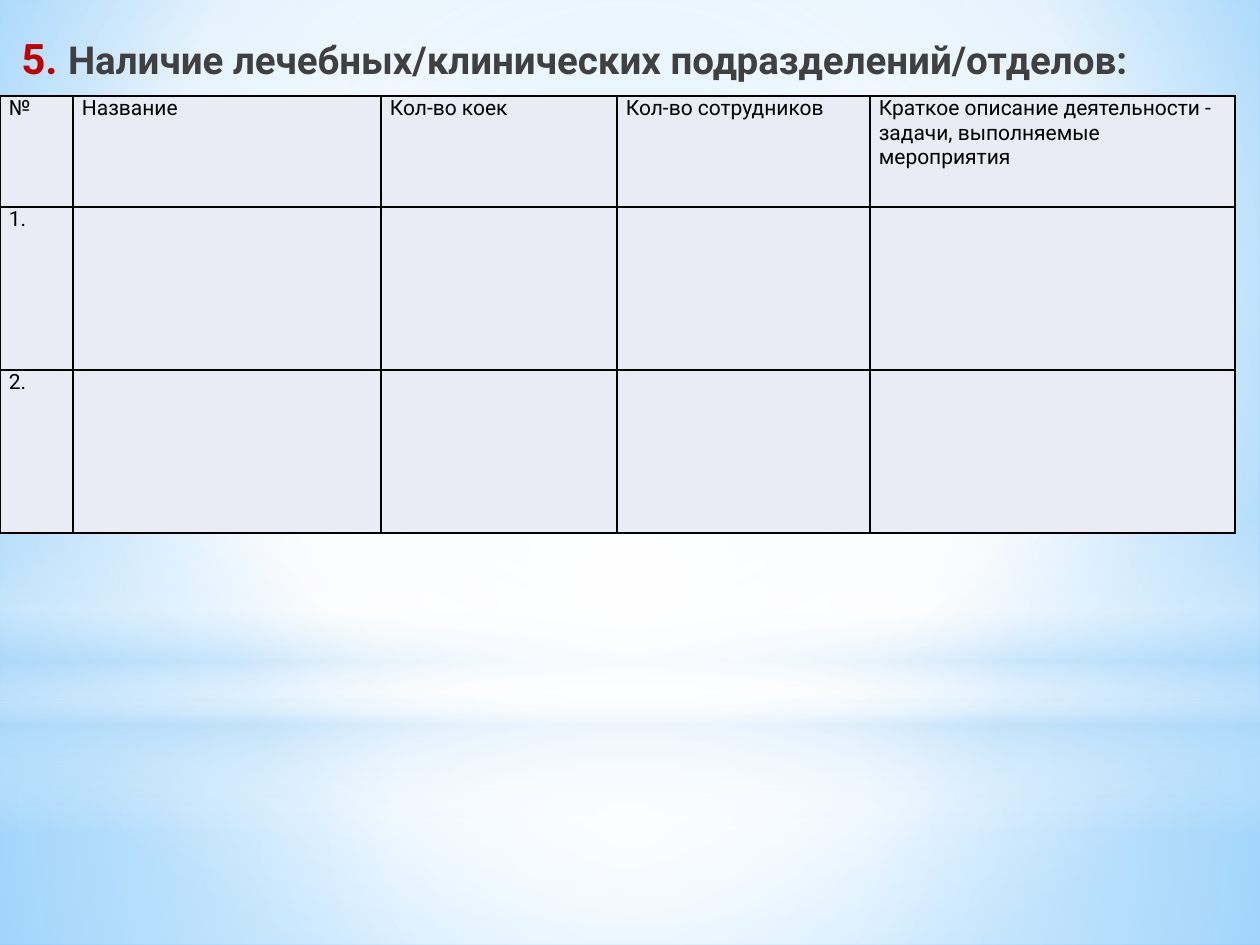
from lxml import etree
from pptx import Presentation
from pptx.dml.color import RGBColor
from pptx.enum import shapes, text
from pptx.oxml.ns import qn
from pptx.util import Emu, Pt

SCALE = 914400 / 126
FONT = "Roboto"
WHITE = RGBColor(0xFF, 0xFF, 0xFF)
BLACK = RGBColor(0, 0, 0)
RED = RGBColor(0xC0, 0, 0)
GREY = RGBColor(0x40, 0x40, 0x40)
CELL = RGBColor(0xE9, 0xEB, 0xF5)
PALE = RGBColor(0xB4, 0xDC, 0xFA)
SKY = RGBColor(0x9E, 0xD5, 0xFF)
DEEP = RGBColor(0x5B, 0xB9, 0xFF)
CENTER = (50, 50, 50, 50)


def px(n):
    return Emu(round(n * SCALE))


def sub(parent, tag, **attrs):
    return etree.SubElement(parent, qn(tag), {k: str(v) for k, v in attrs.items()})


def blend(grad, stops, focus=None):
    """Fill a gradFill with (place, colour, opacity) stops: radial at focus, else downward."""
    for child in list(grad):
        grad.remove(child)
    stop_list = sub(grad, "a:gsLst")
    for place, color, alpha in stops:
        stop = sub(stop_list, "a:gs", pos=place * 1000)
        tint = sub(stop, "a:srgbClr", val=color)
        if alpha < 100:
            sub(tint, "a:alpha", val=alpha * 1000)
    if focus:
        route = sub(grad, "a:path", path="circle")
        sub(route, "a:fillToRect", **{s: v * 1000 for s, v in zip("ltrb", focus)})
    else:
        sub(grad, "a:lin", ang=90 * 60000, scaled=0)


class Page:
    def __init__(self, deck):
        self.slide = deck.slides.add_slide(deck.slide_layouts[6])

    def backdrop(self, stops, focus):
        self.slide.background.fill.gradient()
        blend(next(self.slide.element.iter(qn("a:gradFill"))), stops, focus)

    def glow(self, kind, top, height, stops, focus=None):
        """Add a full-width gradient shape without an outline."""
        shape = self.slide.shapes.add_shape(kind, 0, px(top), px(1260), px(height))
        shape.shadow.inherit = False
        shape.line.fill.background()
        shape.fill.gradient()
        blend(next(shape.element.iter(qn("a:gradFill"))), stops, focus)

    def title(self, box, parts):
        frame = self.slide.shapes.add_textbox(*map(px, box)).text_frame
        frame.word_wrap = True
        frame.vertical_anchor = text.MSO_ANCHOR.TOP
        para = frame.paragraphs[0]
        para.font.name, para.font.bold = FONT, True
        para.space_after = Pt(3)
        para._p.get_or_add_pPr().set("marL", str(px(6)))
        for words, size, color in parts:
            run = para.add_run()
            run.text = words
            run.font.size, run.font.color.rgb = Pt(size), color

    def table(self, left, top, cols, rows, data):
        frame = self.slide.shapes.add_table(
            len(rows), len(cols), px(left), px(top), px(sum(cols)), px(sum(rows)))
        grid = frame.table
        for col, width in zip(grid.columns, cols):
            col.width = px(width)
        for row, height, words in zip(grid.rows, rows, data):
            row.height = px(height)
            for cell, word in zip(row.cells, words):
                self.cell(cell, word)

    def cell(self, cell, word):
        cell.margin_left = cell.margin_right = px(9)
        cell.margin_top = cell.margin_bottom = 0
        props = cell._tc.get_or_add_tcPr()
        for side in "LRTB":
            line = sub(props, f"a:ln{side}", w=Pt(1))
            sub(sub(line, "a:solidFill"), "a:srgbClr", val=BLACK)
        cell.fill.solid()
        cell.fill.fore_color.rgb = CELL
        cell.text = word
        font = cell.text_frame.paragraphs[0].font
        font.name, font.size, font.bold = FONT, Pt(12), False
        font.color.rgb = BLACK


def main():
    deck = Presentation()
    deck.slide_width, deck.slide_height = px(1260), px(945)
    page = Page(deck)
    rect, oval = shapes.MSO_SHAPE.RECTANGLE, shapes.MSO_SHAPE.OVAL

    page.backdrop([(0, SKY, 100), (60, WHITE, 100), (100, DEEP, 100)], (20, 10, 20, 60))
    page.glow(rect, 703, 242, [(0, WHITE, 91), (37, WHITE, 76), (100, PALE, 79)], CENTER)
    page.glow(rect, 0, 703, [(0, WHITE, 89), (48, WHITE, 62), (100, PALE, 79)], CENTER)
    page.glow(rect, 519, 315, [(0, WHITE, 0), (29, WHITE, 30), (45, PALE, 40),
                               (55, WHITE, 26), (65, PALE, 60), (100, WHITE, 0)])
    page.glow(oval, 220, 703, [(0, WHITE, 100), (56, WHITE, 0)], CENTER)

    page.title((3, 26, 1221, 770), [
        ("5. ", 24, RED),
        ("Наличие лечебных/клинических подразделений/отделов:", 22, GREY)])
    head = ["№", "Название", "Кол-во коек", "Кол-во сотрудников",
            "Краткое описание деятельности - задачи, выполняемые мероприятия"]
    blank = [""] * 4
    page.table(0, 96, [73, 308, 236, 253, 365], [111, 163, 163],
               [head, ["1.", *blank], ["2.", *blank]])
    deck.save("out.pptx")


if __name__ == "__main__":
    main()
